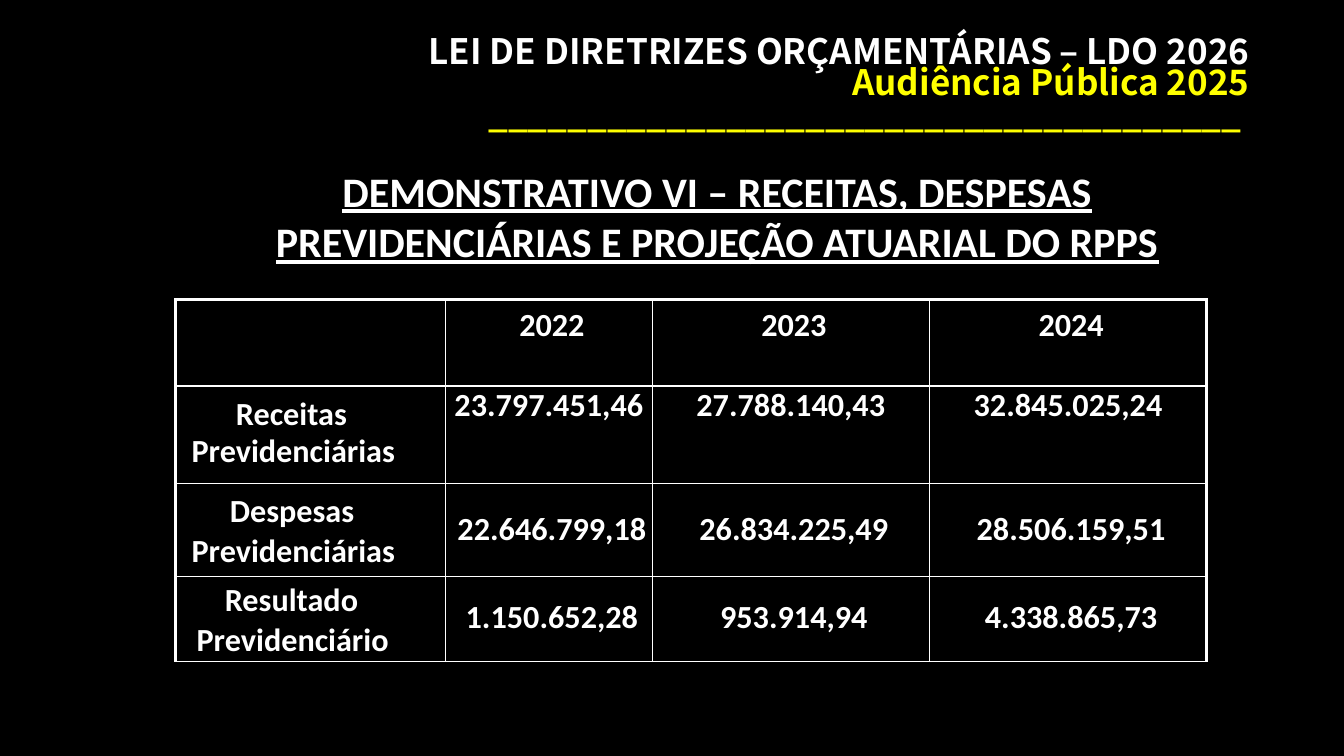
from lxml.etree import SubElement
from pptx import Presentation
from pptx.dml.color import RGBColor
from pptx.enum.text import MSO_ANCHOR, MSO_AUTO_SIZE, PP_ALIGN
from pptx.oxml.ns import qn
from pptx.util import Inches, Pt

WHITE, YELLOW, BLACK = "FFFFFF", "FFFF00", "000000"
HEADING = [
    ("LEI DE DIRETRIZES ORÇAMENTÁRIAS – LDO 2026", WHITE),
    ("Audiência Pública 2025", YELLOW),
    ("_" * 38 + " ", YELLOW),
]
SUBTITLE = ("DEMONSTRATIVO VI – RECEITAS, DESPESAS PREVIDENCIÁRIAS "
            "E PROJEÇÃO ATUARIAL DO RPPS")
ROWS = [
    ("", "2022", "2023", "2024"),
    ("Receitas Previdenciárias", "23.797.451,46", "27.788.140,43", "32.845.025,24"),
    ("Despesas Previdenciárias", "22.646.799,18", "26.834.225,49", "28.506.159,51"),
    ("Resultado Previdenciário", "1.150.652,28", "953.914,94", "4.338.865,73"),
]
COL_WIDTHS = [2.68, 2.05, 2.75, 2.75]
ROW_HEIGHTS = [0.86, 0.97, 0.92, 0.84]
# Per row: top inset and left margin of the values
VALUE_LAYOUT = [(0.06, 0.06), (0, 0), (0.26, 0.06), (0.21, 0.06)]
# Per row: top inset, left margin, first-line indent and line spacing of the label
LABEL_LAYOUT = [(0, 0, 0, 1.0), (0.11, 0.16, 0.44, Pt(26.3)),
                (0.08, 0.16, 0.38, 1.0), (0.03, 0.21, 0.28, 1.02)]


def rgb(color):
    return RGBColor.from_string(color)


def style(r, size, color=WHITE, font="Calibri"):
    r.font.name, r.font.size, r.font.bold = font, Pt(size), True
    r.font.color.rgb = rgb(color)


def indent(p, left, first=0):
    pPr = p._p.get_or_add_pPr()
    pPr.set("marL", str(Inches(left)))
    pPr.set("indent", str(Inches(first)))


def set_borders(cell, widths):
    """Draw white left, right, top and bottom borders of the given widths."""
    tcPr = cell._tc.get_or_add_tcPr()
    for i, (side, width) in enumerate(zip("LRTB", widths)):
        ln = SubElement(tcPr, qn(f"a:ln{side}"), w=str(Pt(width)))
        fill = SubElement(ln, qn("a:solidFill"))
        SubElement(fill, qn("a:srgbClr"), val=WHITE)
        tcPr.insert(i, ln)


def add_heading(s):
    title = s.shapes.title
    title.left, title.top = Inches(0.99), Inches(0.34)
    title.width, title.height = Inches(11.5), Inches(1.45)
    tf = title.text_frame
    tf.word_wrap, tf.auto_size = True, MSO_AUTO_SIZE.NONE
    tf.vertical_anchor = MSO_ANCHOR.MIDDLE
    p = tf.paragraphs[0]
    p.alignment, p.line_spacing = PP_ALIGN.RIGHT, 0.75
    p.font.size = Pt(25)
    for text, color in HEADING:
        r = p.add_run()
        r.text = text
        style(r, 25, color, "Noto Sans CJK JP")
        p.add_line_break()


def add_table(s):
    table = s.shapes.add_table(
        len(ROWS), len(COL_WIDTHS), Inches(1.74), Inches(2.97),
        Inches(sum(COL_WIDTHS)), Inches(sum(ROW_HEIGHTS))).table
    for column, width in zip(table.columns, COL_WIDTHS):
        column.width = Inches(width)
    for row, height in zip(table.rows, ROW_HEIGHTS):
        row.height = Inches(height)
    last = len(COL_WIDTHS) - 1
    for i, values in enumerate(ROWS):
        for j, text in enumerate(values):
            cell = table.cell(i, j)
            cell.fill.solid()
            cell.fill.fore_color.rgb = rgb(BLACK)
            set_borders(cell, (2.25 if j == 0 else 1, 2.25 if j == last else 1,
                               2.25 if i == 0 else 1, 1))
            cell.margin_left = cell.margin_right = cell.margin_bottom = 0
            cell.text_frame.text = text
            p = cell.text_frame.paragraphs[0]
            if j == 0:
                top, left, first, p.line_spacing = LABEL_LAYOUT[i]
                p.alignment = PP_ALIGN.LEFT
                indent(p, left, first)
            else:
                top, left = VALUE_LAYOUT[i]
                p.alignment = PP_ALIGN.CENTER
                indent(p, left)
            cell.margin_top = Inches(top)
            for r in p.runs:
                style(r, 23)


def add_subtitle(s):
    tf = s.shapes.add_textbox(Inches(1.74), Inches(1.59),
                              Inches(10.75), Inches(1.11)).text_frame
    tf.word_wrap = True
    tf.text = SUBTITLE
    p = tf.paragraphs[0]
    p.alignment = PP_ALIGN.CENTER
    style(p.runs[0], 30)
    p.runs[0].font.underline = True


def main():
    prs = Presentation()
    prs.slide_width, prs.slide_height = Inches(13.33), Inches(7.5)
    s = prs.slides.add_slide(prs.slide_layouts[5])
    s.background.fill.solid()
    s.background.fill.fore_color.rgb = rgb(BLACK)
    add_heading(s)
    add_table(s)
    add_subtitle(s)
    prs.save("out.pptx")


if __name__ == "__main__":
    main()
